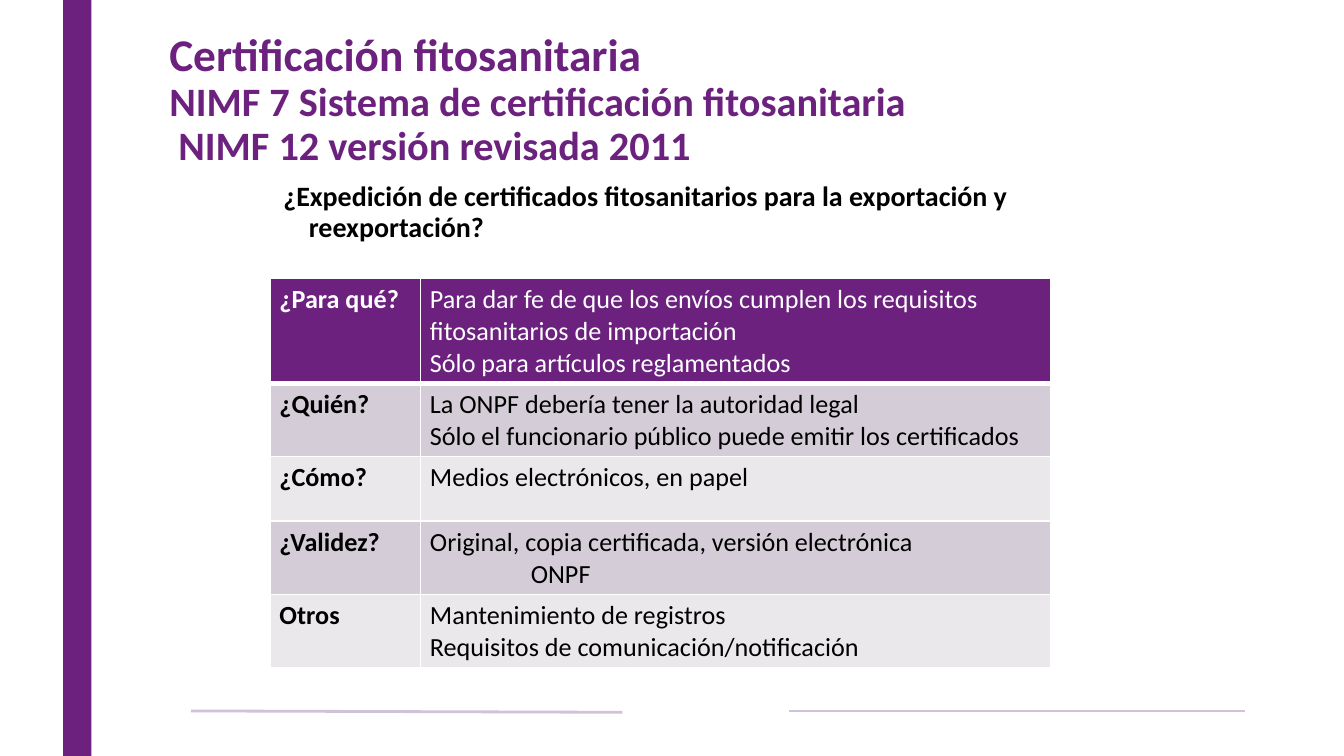
from lxml import etree
from pptx import Presentation
from pptx import util as u
from pptx.dml.color import RGBColor
from pptx.enum import shapes, text
from pptx.oxml import ns

PAGE_WIDTH = u.Inches(10)
PAGE_HEIGHT = PAGE_WIDTH * 9 // 16
PURPLE, LILAC, BLACK, WHITE = "6C217F", "CFC2D9", "000000", "FFFFFF"
BANDS = ["D4CDD8", "EBE8EC"]
COLUMNS = [1.12, 4.69]
ROWS = [
    (0.75, "¿Para qué?", ["Para dar fe de que los envíos cumplen los requisitos fitosanitarios de importación",
                          "Sólo para artículos reglamentados"]),
    (0.53, "¿Quién?", ["La ONPF debería tener la autoridad legal",
                       "Sólo el funcionario público puede emitir los certificados"]),
    (0.48, "¿Cómo?", ["Medios electrónicos, en papel"]),
    (0.53, "¿Validez?", ["Original, copia certificada, versión electrónica", "\tONPF"]),
    (0.53, "Otros", ["Mantenimiento de registros", "Requisitos de comunicación/notificación"]),
]


def rgb(value):
    return RGBColor.from_string(value)


def add_span(para, words, size=14, color=BLACK, bold=False):
    span = para.add_run()
    span.text = words
    span.font.name = "Calibri"
    span.font.size = u.Pt(size)
    span.font.bold = bold
    span.font.color.rgb = rgb(color)


def hang(para, distance):
    properties = para._p.get_or_add_pPr()
    properties.set("marL", str(u.Inches(distance)))
    properties.set("indent", str(-u.Inches(distance)))


def add_tab_stop(para, distance):
    stops = etree.SubElement(para._p.get_or_add_pPr(), ns.qn("a:tabLst"))
    etree.SubElement(stops, ns.qn("a:tab"), pos=str(u.Inches(distance)), algn="l")


def add_bar(page):
    bar = page.shapes.add_shape(shapes.MSO_SHAPE.RECTANGLE, u.Inches(0.47), 0, u.Inches(0.21), PAGE_HEIGHT)
    bar.shadow.inherit = False
    bar.fill.solid()
    bar.fill.fore_color.rgb = rgb(PURPLE)
    bar.line.fill.background()


def add_rule(page, *ends):
    rule = page.shapes.add_connector(shapes.MSO_CONNECTOR.STRAIGHT, *map(u.Inches, ends))
    rule.line.color.rgb = rgb(LILAC)
    rule.line.width = u.Pt(1.5)
    etree.SubElement(rule._element.spPr, ns.qn("a:effectLst"))


def fill_title(page):
    title = page.shapes.title
    title.left, title.top, title.width, title.height = map(u.Inches, (1.16, 0.28, 7.26, 0.94))
    frame = title.text_frame
    frame.word_wrap = True
    frame.auto_size = text.MSO_AUTO_SIZE.NONE
    frame.vertical_anchor = text.MSO_ANCHOR.MIDDLE
    para = frame.paragraphs[0]
    para.alignment = text.PP_ALIGN.LEFT
    para.line_spacing = 0.9
    add_span(para, "Certificación fitosanitaria", size=24.3, color=PURPLE, bold=True)
    for words in ("NIMF 7 Sistema de certificación fitosanitaria", " NIMF 12 versión revisada 2011"):
        para.add_line_break()
        add_span(para, words, size=21.6, color=PURPLE, bold=True)


def add_question(page):
    box = page.shapes.add_textbox(*map(u.Inches, (2.01, 1.31, 5.97, 3.64)))
    box.text_frame.word_wrap = True
    para = box.text_frame.paragraphs[0]
    hang(para, 0.19)
    para.line_spacing = 0.9
    add_span(para, "¿Expedición de certificados fitosanitarios para la exportación y reexportación?",
             size=15, bold=True)


def add_borders(cell, bottom):
    properties = cell._tc.get_or_add_tcPr()
    for position, (side, width) in enumerate([("L", 1), ("R", 1), ("T", 1), ("B", bottom)]):
        border = etree.Element(ns.qn(f"a:ln{side}"), w=str(u.Pt(width)))
        fill = etree.SubElement(border, ns.qn("a:solidFill"))
        etree.SubElement(fill, ns.qn("a:srgbClr"), val=WHITE)
        properties.insert(position, border)


def fill_cell(cell, lines, fill, **style):
    cell.margin_left = cell.margin_right = u.Inches(0.07)
    cell.margin_top = cell.margin_bottom = u.Inches(0.04)
    cell.fill.solid()
    cell.fill.fore_color.rgb = rgb(fill)
    add_borders(cell, bottom=3 if fill == PURPLE else 1)
    frame = cell.text_frame
    for number, words in enumerate(lines):
        para = frame.add_paragraph() if number else frame.paragraphs[0]
        if words.startswith("\t"):
            add_tab_stop(para, 0.75)
        add_span(para, words, **style)


def add_answers(page):
    size = sum(COLUMNS), sum(row[0] for row in ROWS)
    frame = page.shapes.add_table(len(ROWS), len(COLUMNS), *map(u.Inches, (2.01, 2.07, *size)))
    table = frame.table
    for column, width in zip(table.columns, COLUMNS):
        column.width = u.Inches(width)
    for number, (height, question, answers) in enumerate(ROWS):
        table.rows[number].height = u.Inches(height)
        fill = BANDS[(number - 1) % 2] if number else PURPLE
        color = BLACK if number else WHITE
        fill_cell(table.cell(number, 0), [question], fill, color=color, bold=True)
        fill_cell(table.cell(number, 1), answers, fill, color=color)


def main():
    deck = Presentation()
    deck.slide_width, deck.slide_height = PAGE_WIDTH, PAGE_HEIGHT
    page = deck.slides.add_slide(deck.slide_layouts[5])
    add_bar(page)
    add_rule(page, 4.63, 5.3, 1.42, 5.29)
    add_rule(page, 5.87, 5.29, 9.26, 5.29)
    fill_title(page)
    add_question(page)
    add_answers(page)
    deck.save("out.pptx")


if __name__ == "__main__":
    main()
